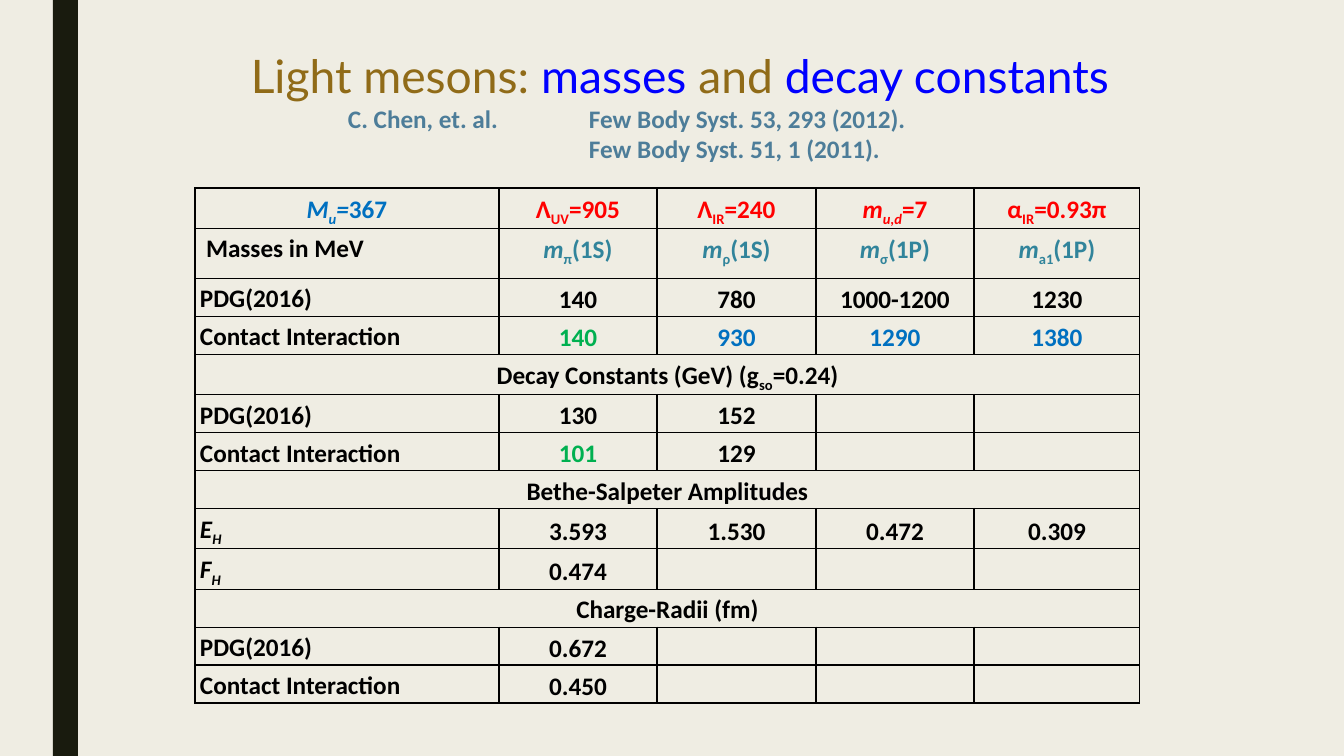
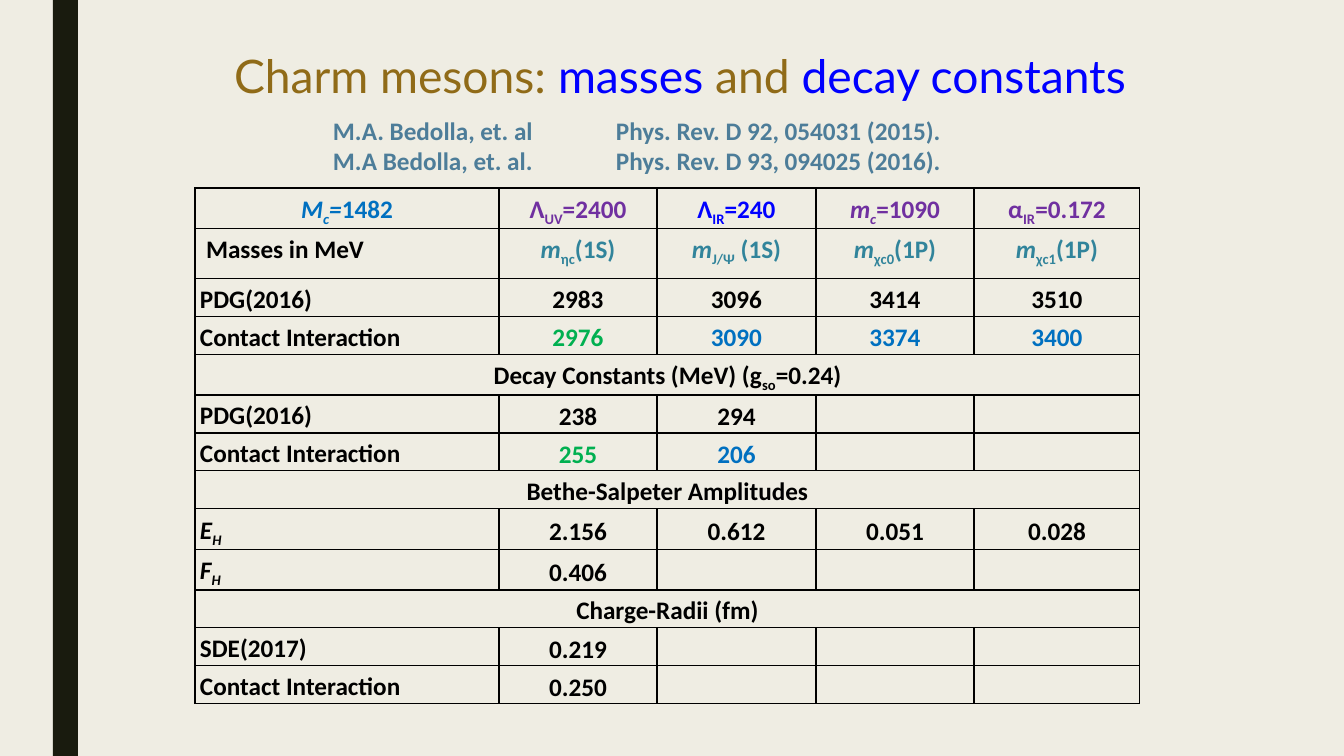
from dataclasses import dataclass

from lxml.etree import SubElement
from pptx import Presentation
from pptx.dml.color import RGBColor
from pptx.enum.shapes import MSO_SHAPE
from pptx.enum.text import MSO_ANCHOR, PP_ALIGN
from pptx.oxml import parse_xml
from pptx.oxml.ns import nsdecls, qn
from pptx.util import Emu, Pt

EMU_PER_INCH = 914400
PX_PER_INCH = 100.8
SLIDE_BOX = (0, 0, 1344, 756)
BAND_BOX = (53, 0, 25, 756)
TITLE_BOX = (210, 24, 940, 84)
TABLE_BOX = (195, 188, 945, 514)
COLUMN_WIDTHS = (304, 158, 159, 158, 166)
ROW_HEIGHTS = (40, 50, 38, 38, 40, 38, 38, 38, 40, 40, 38, 38, 38)
PARAMETER_ROW, MASS_ROW = 0, 1

BACKGROUND = RGBColor(0xEF, 0xED, 0xE3)
BAND = RGBColor(0x19, 0x1B, 0x0E)
GOLD = RGBColor(0x90, 0x6B, 0x18)
BRIGHT_BLUE = RGBColor(0x00, 0x00, 0xFF)
STEEL = RGBColor(0x4D, 0x7D, 0x99)
BLACK = RGBColor(0x00, 0x00, 0x00)
BLUE = RGBColor(0x00, 0x70, 0xC0)
TEAL = RGBColor(0x31, 0x84, 0x9B)
GREEN = RGBColor(0x00, 0xB0, 0x50)
RED = RGBColor(0xFF, 0x00, 0x00)
PURPLE = RGBColor(0x70, 0x30, 0xA0)

TITLE_FONT = "Lato"
BODY_FONT = "Calibri"
NO_STYLE = "{2D5ABB26-0587-4C30-8999-92F81FD0307C}"


@dataclass
class Row:
    label: str
    values: tuple = ()
    colors: tuple = (BLACK,) * 4
    label_color: RGBColor = BLACK
    heading: bool = False


@dataclass
class MesonSlide:
    title: str
    reference_box: tuple
    reference_tab: int
    references: tuple
    rows: tuple


MODEL_COLORS = (GREEN, BLUE, BLUE, BLUE)
MASS_COLORS = (TEAL,) * 4
AMPLITUDES = Row("Bethe-Salpeter Amplitudes", heading=True)
RADII = Row("Charge-Radii (fm)", heading=True)

LIGHT_MESONS = MesonSlide(
    "Light mesons: |masses| and |decay constants",
    (348, 103, 853, 92), 241,
    ("C. Chen, et. al.\tFew Body Syst. 53, 293 (2012).",
     "\tFew Body Syst. 51, 1 (2011)."),
    (
        Row("*M~u~=*367", ("Λ~UV~=905", "Λ~IR~=240", "*m~u,d~*=7", "α~IR~=0.93π"),
            (RED,) * 4, BLUE),
        Row("Masses in MeV", ("*m*~π~(1S)", "*m*~ρ~(1S)", "*m*~σ~(1P)", "*m*~a1~(1P)"),
            MASS_COLORS),
        Row("PDG(2016)", ("140", "780", "1000-1200", "1230")),
        Row("Contact Interaction", ("140", "930", "1290", "1380"), MODEL_COLORS),
        Row("Decay Constants (GeV) (g~so~=0.24)", heading=True),
        Row("PDG(2016)", ("130", "152")),
        Row("Contact Interaction", ("101", "129"), (GREEN, BLACK)),
        AMPLITUDES,
        Row("*E~H~*", ("3.593", "1.530", "0.472", "0.309")),
        Row("*F~H~*", ("0.474",)),
        RADII,
        Row("PDG(2016)", ("0.672",)),
        Row("Contact Interaction", ("0.450",)),
    ),
)

CHARM_MESONS = MesonSlide(
    "Charm mesons: |masses| and |decay constants",
    (333, 115, 853, 92), 283,
    ("M.A. Bedolla, et. al\tPhys. Rev. D 92, 054031 (2015).",
     "M.A Bedolla, et. al.\tPhys. Rev. D 93, 094025 (2016)."),
    (
        Row("*M~c~=*1482", ("Λ~UV~=2400", "Λ~IR~=240", "*m~c~*=1090", "α~IR~=0.172"),
            (PURPLE, BRIGHT_BLUE, PURPLE, PURPLE), BLUE),
        Row("Masses in MeV", ("*m*~ηc~(1S)", "*m*~J/Ψ~ (1S)", "*m*~χc0~(1P)", "*m*~χc1~(1P)"),
            MASS_COLORS),
        Row("PDG(2016)", ("2983", "3096", "3414", "3510")),
        Row("Contact Interaction", ("2976", "3090", "3374", "3400"), MODEL_COLORS),
        Row("Decay Constants (MeV) (g~so~=0.24)", heading=True),
        Row("PDG(2016)", ("238", "294")),
        Row("Contact Interaction", ("255", "206"), MODEL_COLORS),
        AMPLITUDES,
        Row("*E~H~*", ("2.156", "0.612", "0.051", "0.028")),
        Row("*F~H~*", ("0.406",)),
        RADII,
        Row("SDE(2017)", ("0.219",)),
        Row("Contact Interaction", ("0.250",)),
    ),
)


def px(length):
    return Emu(round(length * EMU_PER_INCH / PX_PER_INCH))


def place(box):
    return [px(length) for length in box]


def style_font(font, name, size, color, bold=False):
    font.name = name
    font.size = Pt(size)
    font.bold = bold
    font.color.rgb = color


def add_marked_text(paragraph, text):
    for slant, stretch in enumerate(text.split("*")):
        for level, part in enumerate(stretch.split("~")):
            if not part:
                continue
            run = paragraph.add_run()
            run.text = part
            if slant % 2:
                run.font.italic = True
            if level % 2:
                run._r.get_or_add_rPr().set("baseline", "-25000")


def add_background(slide):
    slide.background.fill.solid()
    slide.background.fill.fore_color.rgb = BACKGROUND
    band = slide.shapes.add_shape(MSO_SHAPE.RECTANGLE, *place(BAND_BOX))
    band.shadow.inherit = False
    band.fill.solid()
    band.fill.fore_color.rgb = BAND
    band.line.fill.background()


def add_title(slide, box, title):
    frame = slide.shapes.add_textbox(*place(box)).text_frame
    frame.word_wrap = True
    frame.vertical_anchor = MSO_ANCHOR.BOTTOM
    paragraph = frame.paragraphs[0]
    paragraph.alignment = PP_ALIGN.CENTER
    for index, part in enumerate(title.split("|")):
        run = paragraph.add_run()
        run.text = part
        style_font(run.font, TITLE_FONT, 33, BRIGHT_BLUE if index % 2 else GOLD)


def add_references(slide, box, tab, references):
    frame = slide.shapes.add_textbox(*place(box)).text_frame
    frame.word_wrap = True
    frame.margin_left = frame.margin_right = frame.margin_top = frame.margin_bottom = 0
    for index, reference in enumerate(references):
        paragraph = frame.add_paragraph() if index else frame.paragraphs[0]
        paragraph.add_run().text = reference
        properties = paragraph._p.get_or_add_pPr()
        tabs = SubElement(properties, qn("a:tabLst"))
        SubElement(tabs, qn("a:tab"), pos=str(px(tab)), algn="l")
        style_font(paragraph.font, BODY_FONT, 18, STEEL, True)


def add_borders(cell):
    properties = cell._tc.get_or_add_tcPr()
    for index, side in enumerate("LRTB"):
        properties.insert(index, parse_xml(
            f'<a:ln{side} {nsdecls("a")} w="12700"><a:solidFill>'
            f'<a:srgbClr val="{BLACK}"/></a:solidFill></a:ln{side}>'))


def fill_cell(cell, text, color, alignment, anchor, left=5):
    cell.margin_left, cell.margin_right = px(left), px(5)
    cell.margin_top, cell.margin_bottom = px(1), 0
    cell.vertical_anchor = anchor
    cell.fill.background()
    add_borders(cell)
    paragraph = cell.text_frame.paragraphs[0]
    paragraph.alignment = alignment
    paragraph.line_spacing = 1.15
    paragraph.space_after = Pt(10)
    style_font(paragraph.font, BODY_FONT, 18, color, True)
    add_marked_text(paragraph, text)


def add_meson_table(slide, box, rows):
    frame = slide.shapes.add_table(len(rows), len(COLUMN_WIDTHS), *place(box))
    table = frame.table
    table.first_row = table.horz_banding = False
    table._tbl.tblPr.find(qn("a:tableStyleId")).text = NO_STYLE
    for column, width in zip(table.columns, COLUMN_WIDTHS):
        column.width = px(width)
    for index, (row, height) in enumerate(zip(rows, ROW_HEIGHTS)):
        table.rows[index].height = px(height)
        centred = row.heading or index == PARAMETER_ROW
        fill_cell(table.cell(index, 0), row.label, row.label_color,
                  PP_ALIGN.CENTER if centred else PP_ALIGN.LEFT, MSO_ANCHOR.TOP,
                  11 if index == MASS_ROW else 5)
        anchor = MSO_ANCHOR.TOP if index <= MASS_ROW else MSO_ANCHOR.MIDDLE
        for position in range(1, len(COLUMN_WIDTHS)):
            filled = position <= len(row.values)
            text = row.values[position - 1] if filled else ""
            color = row.colors[position - 1] if filled else BLACK
            fill_cell(table.cell(index, position), text, color, PP_ALIGN.CENTER, anchor)
        if row.heading:
            table.cell(index, 0).merge(table.cell(index, len(COLUMN_WIDTHS) - 1))


def add_meson_slide(presentation, content):
    slide = presentation.slides.add_slide(presentation.slide_layouts[6])
    add_background(slide)
    add_meson_table(slide, TABLE_BOX, content.rows)
    add_references(slide, content.reference_box, content.reference_tab, content.references)
    add_title(slide, TITLE_BOX, content.title)


def main():
    presentation = Presentation()
    presentation.slide_width, presentation.slide_height = place(SLIDE_BOX)[2:]
    for content in (LIGHT_MESONS, CHARM_MESONS):
        add_meson_slide(presentation, content)
    presentation.save("out.pptx")


if __name__ == "__main__":
    main()
